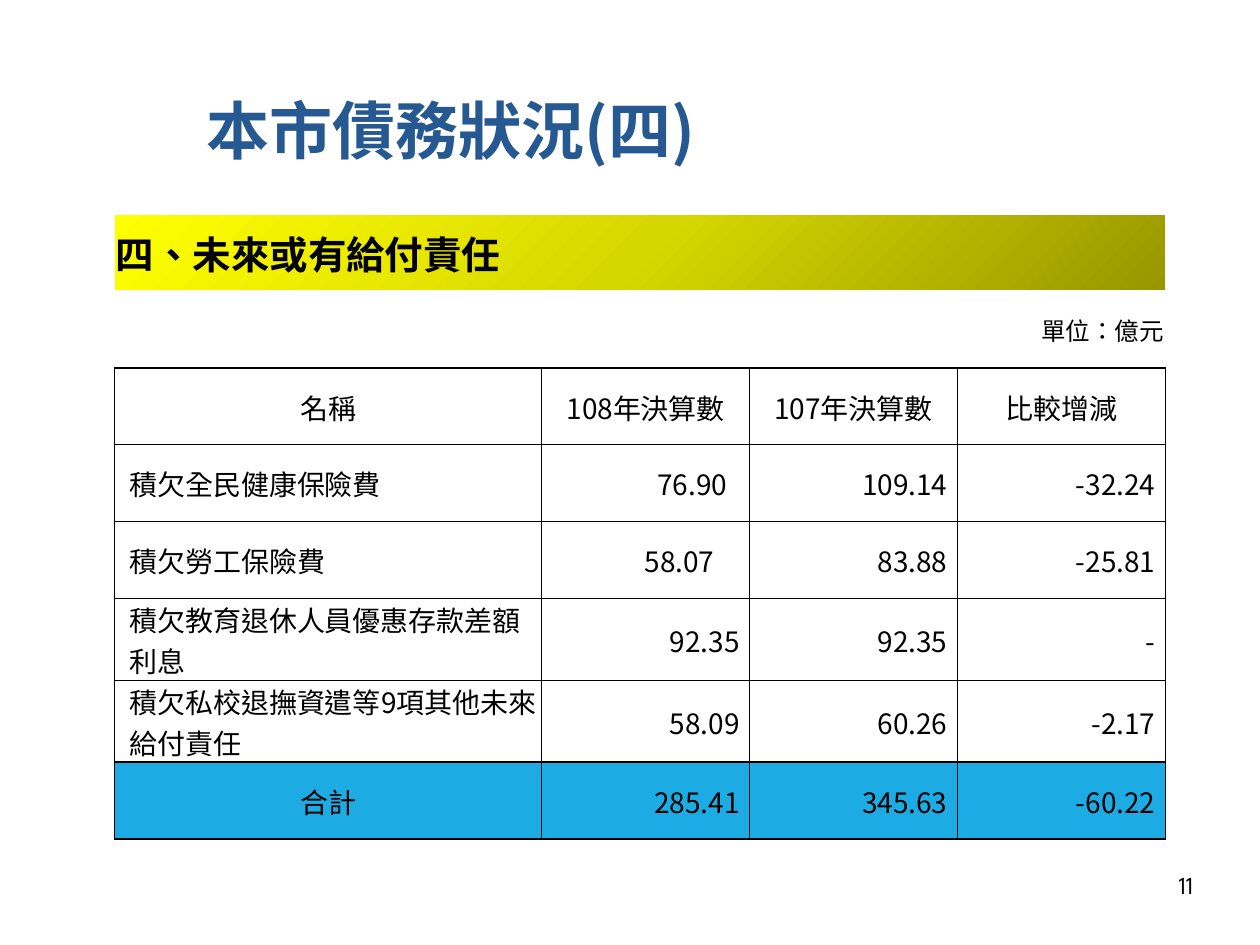
from pptx import Presentation
from pptx.dml.color import RGBColor as RGB
from pptx.enum.text import MSO_ANCHOR as Anchor, PP_ALIGN as Align
from pptx.oxml import parse_xml
from pptx.oxml.ns import qn
from pptx.util import Inches, Pt
from lxml.etree import SubElement as Sub

BLUE = RGB(0x26, 0x59, 0x91)
SKY = RGB(0x1C, 0xAC, 0xE3)
BLACK = RGB(0, 0, 0)
WHITE = RGB(255, 255, 255)
OLIVE = RGB(0x97, 0x97, 0)
LIME = RGB(0xD7, 0xD7, 0)
YELLOW = RGB(255, 255, 0)

SANS = "Noto Sans CJK SC"
SPARTAN = "League Spartan"
NS = "http://schemas.openxmlformats.org/drawingml/2006/main"

HEADS = ["名稱", "108年決算數", "107年決算數", "比較增減"]
DEBTS = [
    ["積欠全民健康保險費", "76.90", "109.14", "-32.24"],
    ["積欠勞工保險費", "58.07", "83.88", "-25.81"],
    ["積欠教育退休人員優惠存款差額利息", "92.35", "92.35", "-"],
    ["積欠私校退撫資遣等9項其他未來給付責任", "58.09", "60.26", "-2.17"],
]
TOTAL = ["合計", "285.41", "345.63", "-60.22"]
WIDTHS = [3.39, 1.65, 1.65, 1.65]
ONE, TWO = 0.61, 0.65  # heights of rows with one and two lines of text
HEIGHTS = [ONE] * 5 + [TWO] * 2 + [ONE]
INDENTS = {(3, 1): 0.18, (4, 1): 0.28}  # figures set further from the right edge


def write(frame, text, size, color=BLACK, bold=False, align=Align.LEFT, font=SANS):
    frame.word_wrap = True
    frame.vertical_anchor = Anchor.MIDDLE
    para = frame.paragraphs[0]
    para.alignment = align
    run = para.add_run()
    run.text = text
    run.font.size = Pt(size)
    run.font.bold = bold
    run.font.color.rgb = color
    run.font.name = font
    props = run.font._element
    props.set("lang", "zh-TW")  # centres the full-width punctuation
    Sub(props, qn("a:ea")).set("typeface", font)


def add_text(slide, box, text, size, **style):
    area = slide.shapes.add_textbox(*[Inches(n) for n in box])
    write(area.text_frame, text, size, **style)


def edge(cell, **sides):
    """Draw the cell's borders; call before the cell is filled."""
    props = cell._tc.get_or_add_tcPr()
    for side in "LRTB":
        line = Sub(props, qn("a:ln" + side), w=str(Pt(1)))
        fill = Sub(line, qn("a:solidFill"))
        Sub(fill, qn("a:srgbClr"), val=str(sides.get(side, sides["rest"])))


def shade(cell):
    """Fill the cell with the diagonal yellow gradient."""
    stops = "".join(
        f'<a:gs pos="{pos}"><a:srgbClr val="{color}"/></a:gs>'
        for pos, color in [(0, OLIVE), (50000, LIME), (100000, YELLOW)])
    cell._tc.get_or_add_tcPr().append(parse_xml(
        f'<a:gradFill xmlns:a="{NS}" rotWithShape="1"><a:gsLst>{stops}</a:gsLst>'
        '<a:lin ang="13500000" scaled="0"/></a:gradFill>'))


def fill_cell(cell, text, size=16, left=0.01, right=0.01, **style):
    cell.margin_left, cell.margin_right = Inches(left), Inches(right)
    cell.margin_top, cell.margin_bottom = Inches(0.01), 0
    write(cell.text_frame, text, size, **style)
    cell.vertical_anchor = Anchor.MIDDLE


def add_debts(slide, box):
    rows = [HEADS, *DEBTS, TOTAL]
    count = len(HEIGHTS)
    frame = slide.shapes.add_table(count, len(WIDTHS), *[Inches(n) for n in box])
    table = frame.table
    table.first_row = table.horz_banding = False
    for col, width in zip(table.columns, WIDTHS):
        col.width = Inches(width)
    for row, height in zip(table.rows, HEIGHTS):
        row.height = Inches(height)

    # Borders and fills
    for r in range(count):
        for c in range(len(WIDTHS)):
            cell = table.cell(r, c)
            if r < 2:
                edge(cell, rest=WHITE, B=BLACK if r == 1 else WHITE)
            else:
                edge(cell, rest=BLACK)
            if r == 0:
                shade(cell)
            else:
                cell.fill.solid()
                cell.fill.fore_color.rgb = SKY if r == count - 1 else WHITE

    # Heading band and unit note
    table.cell(0, 0).merge(table.cell(0, 3))
    fill_cell(table.cell(0, 0), "四、未來或有給付責任", 22, bold=True)
    table.cell(1, 1).merge(table.cell(1, 3))
    fill_cell(table.cell(1, 1), "單位：億元", 14, align=Align.RIGHT)

    # Column heads, debts and total
    for r, row in enumerate(rows, 2):
        for c, text in enumerate(row):
            cell = table.cell(r, c)
            if r == 2 or (c == 0 and r == count - 1):
                fill_cell(cell, text, align=Align.CENTER)
            elif c == 0:
                fill_cell(cell, text, left=0.12)
            else:
                fill_cell(cell, text, right=INDENTS.get((r, c), 0.08), align=Align.RIGHT)


def main():
    deck = Presentation()
    deck.slide_width, deck.slide_height = Inches(10), Inches(7.5)
    slide = deck.slides.add_slide(deck.slide_layouts[6])
    slide.background.fill.solid()
    slide.background.fill.fore_color.rgb = WHITE

    add_text(slide, (1.54, 0.63, 6.66, 0.79), "本市債務狀況(四)", 36, color=BLUE, bold=True)
    add_debts(slide, (0.91, 1.7, sum(WIDTHS), sum(HEIGHTS)))
    add_text(slide, (8.93, 6.82, 0.64, 0.4), "11", 14, align=Align.RIGHT, font=SPARTAN)
    deck.save("out.pptx")


if __name__ == "__main__":
    main()
